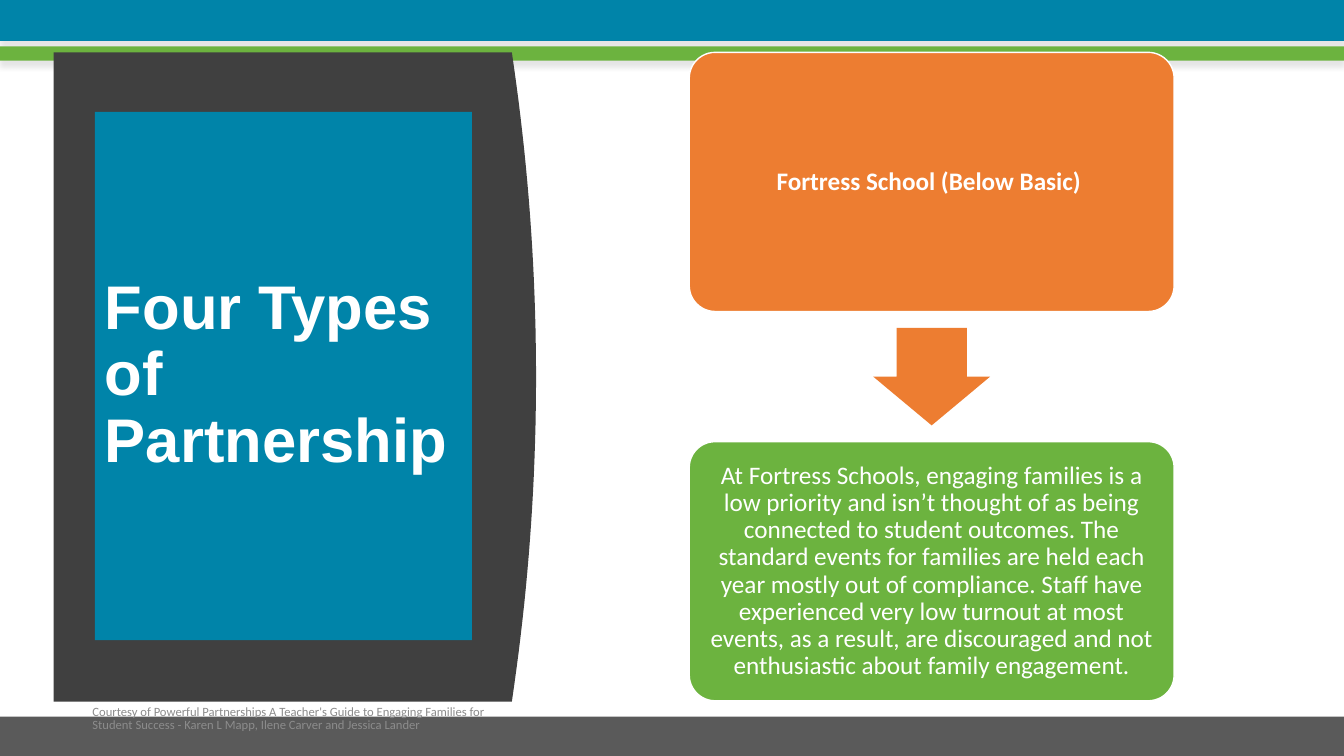
from lxml.etree import SubElement
from pptx import Presentation
from pptx.dml.color import RGBColor
from pptx.enum.shapes import MSO_SHAPE as Preset
from pptx.enum.text import MSO_ANCHOR as Anchor, MSO_AUTO_SIZE as AutoSize, PP_ALIGN as Align
from pptx.oxml.ns import qn
from pptx.util import Cm, Pt

BLUE = RGBColor(0x00, 0x84, 0xA9)
GREEN = RGBColor(0x6C, 0xB3, 0x3F)
ORANGE = RGBColor(0xED, 0x7D, 0x31)
CHARCOAL = RGBColor(0x40, 0x40, 0x40)
FOOTER_GRAY = RGBColor(0x5A, 0x5A, 0x5A)
CREDIT_GRAY = RGBColor(0x8C, 0x8C, 0x8C)
WHITE = RGBColor(0xFF, 0xFF, 0xFF)

HEADING = "Four Types of Partnership"
CREDIT = ("Courtesy of Powerful Partnerships A Teacher's Guide to Engaging Families for "
          "Student Success - Karen L Mapp, Ilene Carver and Jessica Lander")
CARDS = [
    ("Fortress School (Below Basic) ", ORANGE, True),
    ("At Fortress Schools, engaging families is a low priority and isn’t thought of as "
     "being connected to student outcomes. The standard events for families are held each "
     "year mostly out of compliance. Staff have experienced very low turnout at most "
     "events, as a result, are discouraged and not enthusiastic about family engagement.",
     GREEN, False),
]
BANDS = [
    (0, 1.02, BLUE, BLUE, True),
    (1.17, 0.36, GREEN, None, True),
    (18.06, 0.99, FOOTER_GRAY, None, False),
]

SLIDE_W, SLIDE_H = 33.87, 19.05
PANEL_LEFT, PANEL_RIGHT, PANEL_TOP, PANEL_BOTTOM = 1.35, 12.9, 1.32, 17.68
PANEL_BULGE, CURVE_STEPS = 0.61, 40
CARD_LEFT, CARD_TOP, CARD_W, CARD_H, CARD_PITCH = 17.37, 1.32, 12.22, 6.53, 9.81
ARROW_W, ARROW_H = 2.95, 2.46
CARD_INSET = 0.18


def paint(shape, fill, line=None):
    shape.shadow.inherit = False
    shape.fill.solid()
    shape.fill.fore_color.rgb = fill
    if line is None:
        shape.line.fill.background()
    else:
        shape.line.color.rgb = line
        shape.line.width = Pt(1)


def add_preset(slide, preset, left, top, width, height, fill, line=None):
    shape = slide.shapes.add_shape(preset, Cm(left), Cm(top), Cm(width), Cm(height))
    paint(shape, fill, line)
    return shape


def cast_shadow(shape):
    effects = shape.element.spPr.find(qn("a:effectLst"))
    shadow = SubElement(effects, qn("a:outerShdw"), blurRad=str(Pt(4)), dist=str(Pt(4)),
                        dir="5400000", algn="t", rotWithShape="0")
    black = SubElement(shadow, qn("a:srgbClr"), val="000000")
    SubElement(black, qn("a:alpha"), val="9000")


def write(shape, text, size, font, color, bold=False, align=Align.LEFT, anchor=Anchor.MIDDLE):
    frame = shape.text_frame
    frame.word_wrap = True
    frame.auto_size = AutoSize.NONE
    frame.vertical_anchor = anchor
    paragraph = frame.paragraphs[0]
    paragraph.alignment = align
    paragraph.line_spacing = 0.9
    run = paragraph.add_run()
    run.text = text
    run.font.size = Pt(size)
    run.font.name = font
    run.font.bold = bold
    run.font.color.rgb = color
    return paragraph


def add_panel(slide):
    half = (PANEL_BOTTOM - PANEL_TOP) / 2
    curve = []
    for step in range(CURVE_STEPS + 1):
        t = 2 * step / CURVE_STEPS - 1
        curve.append((Cm(PANEL_RIGHT + PANEL_BULGE * (1 - t * t)),
                      Cm(PANEL_TOP + half * (1 + t))))
    builder = slide.shapes.build_freeform(Cm(PANEL_LEFT), Cm(PANEL_TOP))
    builder.add_line_segments(curve + [(Cm(PANEL_LEFT), Cm(PANEL_BOTTOM))], close=True)
    paint(builder.convert_to_shape(), CHARCOAL)


def add_title(slide):
    title = slide.shapes.title
    title.left, title.top, title.width, title.height = Cm(2.39), Cm(2.82), Cm(9.5), Cm(13.31)
    title.fill.solid()
    title.fill.fore_color.rgb = BLUE
    write(title, HEADING, 44, "Arial", WHITE, bold=True)
    title.element.getparent().append(title.element)


def add_credit(slide):
    credit = slide.shapes.add_textbox(Cm(2.08), Cm(17.65), Cm(11.43), Cm(1.02))
    paragraph = write(credit, CREDIT, 9, "Calibri", CREDIT_GRAY, anchor=Anchor.TOP)
    paragraph.space_after = Pt(6)


def add_cards(slide):
    for index, (text, fill, bold) in enumerate(CARDS):
        top = CARD_TOP + index * CARD_PITCH
        if index:
            arrow_top = top - (CARD_PITCH - CARD_H + ARROW_H) / 2
            arrow = add_preset(slide, Preset.DOWN_ARROW, CARD_LEFT + (CARD_W - ARROW_W) / 2,
                               arrow_top, ARROW_W, ARROW_H, ORANGE)
            arrow.adjustments[0] = 0.6
            arrow.adjustments[1] = 0.5
        card = add_preset(slide, Preset.ROUNDED_RECTANGLE, CARD_LEFT, top, CARD_W, CARD_H,
                          fill, WHITE)
        card.adjustments[0] = 0.1
        frame = card.text_frame
        frame.margin_left = frame.margin_right = Cm(CARD_INSET)
        frame.margin_top = frame.margin_bottom = Cm(CARD_INSET)
        write(card, text, 18, "Calibri", WHITE, bold, Align.CENTER)


def main():
    deck = Presentation()
    deck.slide_width, deck.slide_height = Cm(SLIDE_W), Cm(SLIDE_H)
    slide = deck.slides.add_slide(deck.slide_layouts[5])
    for top, height, fill, line, shaded in BANDS:
        band = add_preset(slide, Preset.RECTANGLE, 0, top, SLIDE_W, height, fill, line)
        if shaded:
            cast_shadow(band)
    add_panel(slide)
    add_title(slide)
    add_credit(slide)
    add_cards(slide)
    deck.save("out.pptx")


if __name__ == "__main__":
    main()
